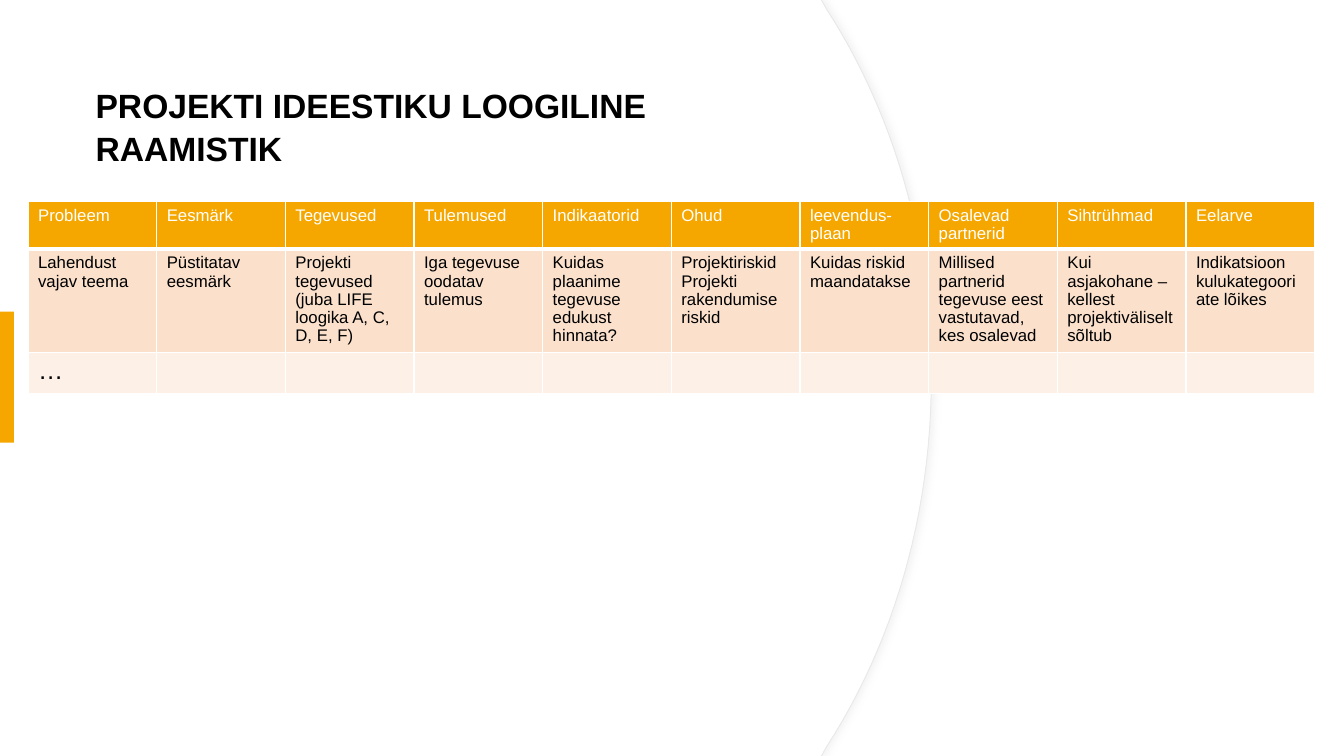
from lxml.etree import SubElement
from pptx import Presentation
from pptx.dml.color import RGBColor
from pptx.enum.shapes import MSO_SHAPE
from pptx.oxml import parse_xml
from pptx.oxml.ns import nsdecls, qn
from pptx.util import Pt

WHITE = RGBColor(0xFF, 0xFF, 0xFF)
BLACK = RGBColor(0x00, 0x00, 0x00)
GOLD = RGBColor(0xF5, 0xA7, 0x00)
PEACH = RGBColor(0xFB, 0xE1, 0xCC)
CREAM = RGBColor(0xFD, 0xF1, 0xE7)
GREY = RGBColor(0xE9, 0xE9, 0xE9)

TITLE = "PROJEKTI IDEESTIKU LOOGILINE RAAMISTIK"
COLUMNS = [
    ("Probleem", "Lahendust vajav teema", "…"),
    ("Eesmärk", "Püstitatav eesmärk", ""),
    ("Tegevused", "Projekti tegevused (juba LIFE loogika A, C, D, E, F)", ""),
    ("Tulemused", "Iga tegevuse oodatav tulemus", ""),
    ("Indikaatorid", "Kuidas plaanime tegevuse edukust hinnata?", ""),
    ("Ohud", "Projektiriskid\nProjekti rakendumise riskid", ""),
    ("leevendus-plaan", "Kuidas riskid maandatakse", ""),
    ("Osalevad partnerid",
     "Millised partnerid tegevuse eest vastutavad, kes osalevad", ""),
    ("Sihtrühmad", "Kui asjakohane – kellest projektiväliselt sõltub", ""),
    ("Eelarve", "Indikatsioon kulukategooriate lõikes", ""),
]
ROWS = [
    {"height": 34, "fill": GOLD, "color": WHITE, "size": 12, "top": 1, "bottom": 3},
    {"height": 74, "fill": PEACH, "color": BLACK, "size": 12, "top": 3, "bottom": 1},
    {"height": 29, "fill": CREAM, "color": BLACK, "size": 18, "top": 1, "bottom": 1},
]
WIDE, HIGH = 960, 540
COL = 91.9
STEPS = 24
ARC = [(590.4, 6.5), (637.9, 79.9), (665.3, 171.4), (665.3, 270)]

deck = Presentation()
deck.slide_width, deck.slide_height = Pt(WIDE), Pt(HIGH)
slide = deck.slides.add_slide(deck.slide_layouts[6])
shapes = slide.shapes


def write(frame, text, size=12, color=BLACK, bold=False, space=0.97):
    frame.word_wrap = True
    frame.text = text
    for para in frame.paragraphs:
        para.line_spacing = space
        font = para.font
        for item in [font] + [run.font for run in para.runs]:
            item.name, item.size, item.bold = "Arial", Pt(size), bold
            item.color.rgb = color


def paint(shape, fill, line=None):
    shape.shadow.inherit = False
    shape.fill.solid()
    shape.fill.fore_color.rgb = fill
    if line is None:
        shape.line.fill.background()
    else:
        shape.line.color.rgb = line
        shape.line.width = Pt(0.75)


def block(left, top, width, height, fill):
    shape = shapes.add_shape(MSO_SHAPE.RECTANGLE, Pt(left), Pt(top), Pt(width), Pt(height))
    paint(shape, fill)


def curve(step):
    t = step / STEPS
    parts = ((1 - t) ** 3, 3 * t * (1 - t) ** 2, 3 * t * t * (1 - t), t ** 3)
    return tuple(sum(p * dot[axis] for p, dot in zip(parts, ARC)) for axis in (0, 1))


def panel(shift, line=None):
    upper = [(586.8, 0)] + [curve(step) for step in range(STEPS + 1)]
    lower = [(x, HIGH - y) for x, y in reversed(upper[:-1])]
    edge = [(Pt(x + shift), Pt(y)) for x, y in upper + lower]
    pen = shapes.build_freeform(0, 0, scale=1.0)
    pen.add_line_segments(edge + [(0, Pt(HIGH))], close=True)
    shape = pen.convert_to_shape()
    paint(shape, WHITE, line)
    return shape


def border(cell, sides):
    props = cell._tc.get_or_add_tcPr()
    for side, width in sides:
        line = SubElement(props, qn("a:ln" + side), w=str(Pt(width)))
        fill = SubElement(line, qn("a:solidFill"))
        SubElement(fill, qn("a:srgbClr"), val=str(WHITE))


block(0, 0, WIDE, HIGH, WHITE)
back = panel(0, GREY)
effects = back._element.spPr.find(qn("a:effectLst"))
effects.append(parse_xml(
    f'<a:outerShdw {nsdecls("a")} blurRad="{Pt(4)}" dist="{Pt(3)}" dir="0">'
    '<a:srgbClr val="D9D9D9"><a:alpha val="30000"/></a:srgbClr></a:outerShdw>'))
panel(-0.7)
block(0, 222.6, 10, 93.6, GOLD)

height = sum(row["height"] for row in ROWS)
table = shapes.add_table(len(ROWS), len(COLUMNS), Pt(20), Pt(144),
                         Pt(COL * len(COLUMNS)), Pt(height)).table
table.horz_banding = False
for c, texts in enumerate(COLUMNS):
    table.columns[c].width = Pt(COL)
    for r, (text, row) in enumerate(zip(texts, ROWS)):
        table.rows[r].height = Pt(row["height"])
        cell = table.cell(r, c)
        border(cell, (("L", 1), ("R", 1), ("T", row["top"]), ("B", row["bottom"])))
        cell.fill.solid()
        cell.fill.fore_color.rgb = row["fill"]
        write(cell.text_frame, text, size=row["size"], color=row["color"])

title = shapes.add_textbox(Pt(61.2), Pt(55.5), Pt(525), Pt(66))
write(title.text_frame, TITLE, size=24, bold=True, space=1.06)

deck.save("out.pptx")
